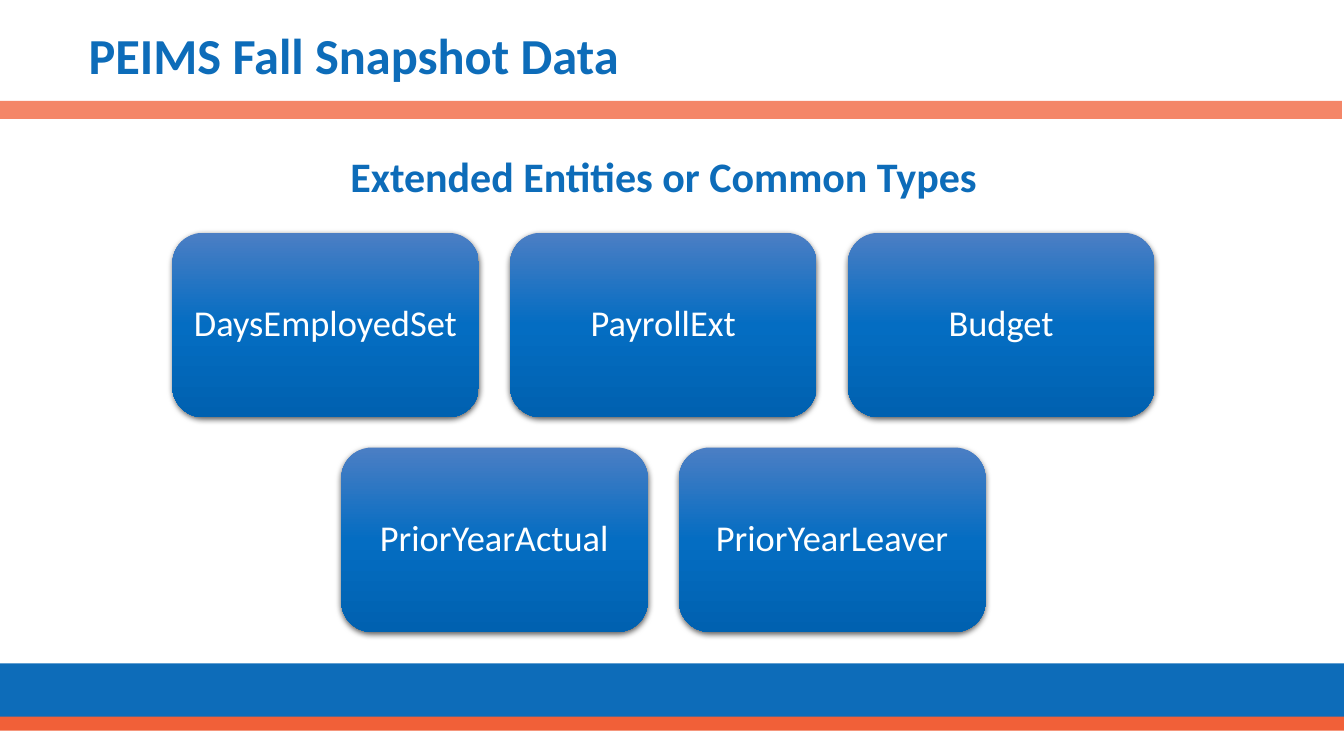
from lxml import etree
from pptx import Presentation
from pptx import util as u
from pptx.dml.color import RGBColor
from pptx.enum import shapes, text
from pptx.oxml import parse_xml
from pptx.oxml.ns import nsdecls, qn

BLUE = RGBColor(0x0D, 0x6C, 0xB9)
ORANGE = RGBColor(0xF1, 0x60, 0x38)
SALMON = RGBColor(0xF4, 0x86, 0x68)
WHITE = RGBColor(0xFF, 0xFF, 0xFF)
BLACK = RGBColor(0, 0, 0)
CARD_STOPS = (
    (0, RGBColor(0x4B, 0x7E, 0xC4)),
    (50, RGBColor(0x04, 0x6D, 0xC2)),
    (100, RGBColor(0x00, 0x61, 0xB0)),
)
FONT = "Calibri"
SLIDE_WIDTH = 13.33
CARD_WIDTH, CARD_HEIGHT = 3.04, 1.83
COLUMN_GAP, ROW_GAP = 0.31, 0.3
CARD_ROWS = (
    ("DaysEmployedSet", "PayrollExt", "Budget"),
    ("PriorYearActual", "PriorYearLeaver"),
)


def inches(*lengths):
    """Convert several lengths to slide units."""
    return [u.Inches(length) for length in lengths]


def write(shape, words, size, color, bold=False, align=text.PP_ALIGN.LEFT,
          spacing=1.0, after=0):
    """Put one formatted, vertically centred paragraph in a shape."""
    frame = shape.text_frame
    frame.word_wrap = True
    frame.vertical_anchor = text.MSO_ANCHOR.MIDDLE
    para = frame.paragraphs[0]
    para.alignment = align
    para.line_spacing = spacing
    para.space_after = u.Pt(after)
    span = para.add_run()
    span.text = words
    span.font.name = FONT
    span.font.size = u.Pt(size)
    span.font.bold = bold
    span.font.color.rgb = color


def add_band(page, box, color):
    """Draw a plain coloured band."""
    band = page.shapes.add_shape(shapes.MSO_SHAPE.RECTANGLE, *inches(*box))
    band.shadow.inherit = False
    band.fill.solid()
    band.fill.fore_color.rgb = color
    band.line.fill.background()


def add_heading(page, box, words, size, **options):
    """Add a bold blue heading in a text box."""
    heading = page.shapes.add_textbox(*inches(*box))
    write(heading, words, size, BLUE, bold=True, **options)


def shade_card(card):
    """Give a card its vertical gradient and soft shadow."""
    card.line.fill.background()
    card.shadow.inherit = False
    stops = "".join(
        f'<a:gs pos="{place * 1000}"><a:srgbClr val="{color}"/></a:gs>'
        for place, color in CARD_STOPS)
    gradient = parse_xml(
        f'<a:gradFill {nsdecls("a")} rotWithShape="1"><a:gsLst>{stops}</a:gsLst>'
        '<a:lin ang="5400000" scaled="0"/></a:gradFill>')
    properties = card.element.spPr
    properties.find(qn("a:prstGeom")).addnext(gradient)
    shadow = etree.SubElement(
        properties.find(qn("a:effectLst")), qn("a:outerShdw"),
        blurRad=str(u.Pt(4.5)), dist=str(u.Pt(1.5)), dir="5400000",
        algn="ctr", rotWithShape="0")
    tint = etree.SubElement(shadow, qn("a:srgbClr"), val=str(BLACK))
    etree.SubElement(tint, qn("a:alpha"), val="63000")


def add_card(page, left, top, words):
    """Draw one labelled rounded card."""
    card = page.shapes.add_shape(
        shapes.MSO_SHAPE.ROUNDED_RECTANGLE,
        *inches(left, top, CARD_WIDTH, CARD_HEIGHT))
    shade_card(card)
    frame = card.text_frame
    frame.margin_left = frame.margin_right = u.Inches(0.11)
    frame.margin_top = frame.margin_bottom = u.Inches(0.11)
    write(card, words, 26, WHITE, align=text.PP_ALIGN.CENTER,
          spacing=0.9, after=9)


def add_card_rows(page, left, top, width):
    """Lay out the card rows, each centred in the given width."""
    for row, names in enumerate(CARD_ROWS):
        row_width = len(names) * (CARD_WIDTH + COLUMN_GAP) - COLUMN_GAP
        start = left + (width - row_width) / 2
        for column, name in enumerate(names):
            add_card(page, start + column * (CARD_WIDTH + COLUMN_GAP),
                     top + row * (CARD_HEIGHT + ROW_GAP), name)


def add_footer(page, top):
    """Draw the two footer bands across the slide."""
    add_band(page, (0, top, SLIDE_WIDTH, 0.58), BLUE)
    add_band(page, (0, top + 0.53, SLIDE_WIDTH, 0.14), ORANGE)


def main():
    """Build and save the slide."""
    deck = Presentation()
    deck.slide_width, deck.slide_height = inches(SLIDE_WIDTH, 7.5)
    page = deck.slides.add_slide(deck.slide_layouts[6])
    add_footer(page, 6.58)
    add_heading(page, (0.78, 0.17, 12.16, 0.82),
                "PEIMS Fall Snapshot Data", 36, spacing=0.9)
    add_card_rows(page, 1.71, 2.31, 9.74)
    add_band(page, (-0.02, 1, SLIDE_WIDTH, 0.18), SALMON)
    add_heading(page, (1.3, 1.44, 10.57, 0.61),
                "Extended Entities or Common Types", 30,
                align=text.PP_ALIGN.CENTER)
    deck.save("out.pptx")


if __name__ == "__main__":
    main()
